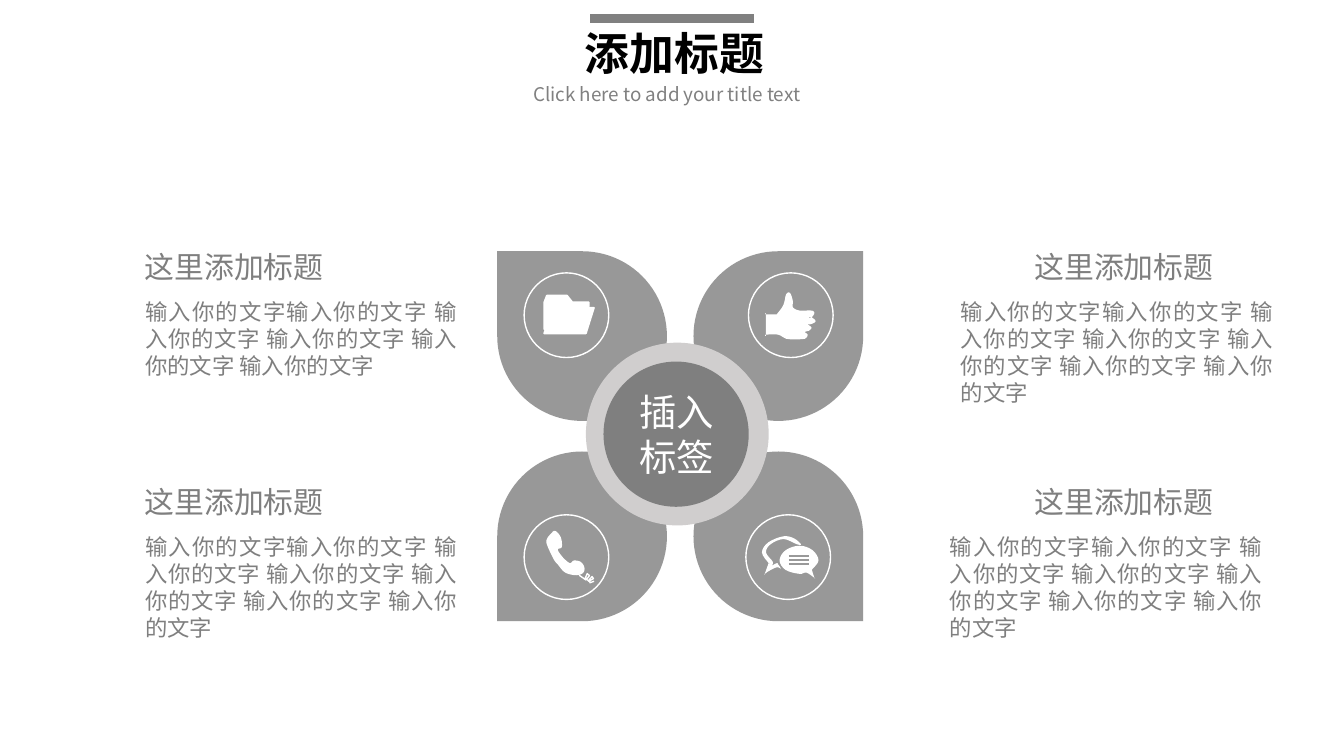
"""Build a four-petal diagram slide with icons, a centre label and captions."""
import lxml.etree
import pptx
import pptx.dml.color
import pptx.enum.shapes
import pptx.enum.text
import pptx.oxml.ns
import pptx.util

Pt = pptx.util.Pt
qn = pptx.oxml.ns.qn
SHAPE = pptx.enum.shapes.MSO_SHAPE
ALIGN = pptx.enum.text.PP_ALIGN
FONT = "Noto Sans CJK SC"
GREY, WHITE = "7F7F7F", "FFFFFF"
RING = 45.36
PHRASE = "输入你的文字"

FOLDER_FRONT = [(37.4, 18.7), (33.1, 32.4), (10.8, 32.4), (15.1, 18.7)]
FOLDER_BACK = [(14.4, 18.7), (15.1, 18), (34.6, 18), (34.6, 15.8), (25.9, 15.8),
               (23, 12.2), (12.2, 12.2), (10.8, 15.8), (10.8, 30.2)]
THUMB = [(33.8, 27.4), (36, 25.9), (33.8, 23.8), (31.7, 23.8), (33.8, 23.8),
         (35.3, 21.6), (33.8, 20.2), (27.4, 20.2), (23.8, 18.5), (23.8, 15.1),
         (22.3, 10.8), (20.2, 11.5), (18.7, 17.3), (15.1, 22.3), (15.1, 22.3),
         (9.4, 22.3), (9.4, 22.3), (9.4, 33.1), (9.4, 33.1), (15.8, 33.1),
         (20.2, 35.3), (24.5, 35.6), (30.2, 35.3), (31.7, 33.1), (30.2, 31.7),
         (32.4, 31), (33.8, 29.5), (32.4, 28.1), (31, 27.8)]
HANDSET = [(16.6, 8.6), (19.6, 12), (20.2, 17.3), (18, 18.7), (20.9, 23),
           (24.5, 25.9), (26.6, 24.5), (30.2, 25.2), (32.2, 28), (31.7, 31),
           (28.1, 32.4), (22, 31), (18, 26.6), (15.8, 23.8), (12.2, 16),
           (12.2, 13), (14.4, 10.1)]
CORD = [(29.5, 32.4), (33.1, 34.9), (35, 32.6), (33.8, 31.5), (32.8, 33.8),
        (34.6, 35.6), (37.1, 34.2), (36.4, 33.1), (34.9, 34.7), (35.3, 36.4),
        (37.4, 35.6)]
BACK_BUBBLE = [(16.6, 25.9), (13.7, 27.4), (13.7, 27.4), (14.4, 25.2), (10.8, 20.2),
               (13.2, 15.8), (20.2, 13), (27.4, 15.8), (29.5, 15.8), (25.9, 12.7),
               (20.2, 11.5), (12, 14.8), (8.6, 20.2), (12.2, 25.9), (12.2, 25.9),
               (10.1, 31.7), (10.1, 31.7), (12.2, 30.2), (16.6, 28.1),
               (18.7, 28.8), (17.3, 26.6)]
FRONT_BUBBLE = [(38.9, 24.5), (35.7, 19), (28.8, 16.6), (21.3, 19), (18, 24.5),
                (21.3, 29.6), (28.8, 31.7), (32.4, 31), (36.7, 33.8),
                (36.7, 33.8), (35.3, 29.5), (35.3, 29.5)]


def rgb(value):
    """Return a colour from a hex string."""
    return pptx.dml.color.RGBColor.from_string(value)


def paint(sp, fill=None, line=None, width=0.75):
    """Set the fill and line of a shape and drop its shadow."""
    sp.shadow.inherit = False
    if fill:
        sp.fill.solid()
        sp.fill.fore_color.rgb = rgb(fill)
    else:
        sp.fill.background()
    if line:
        sp.line.color.rgb = rgb(line)
        sp.line.width = Pt(width)
    else:
        sp.line.fill.background()


def write(sp, lines, size, color, align=ALIGN.LEFT, bold=False, wrap=True):
    """Write paragraphs in one font into a shape."""
    tf = sp.text_frame
    tf.text = "\n".join(lines)
    tf.word_wrap = wrap
    tf.auto_size = pptx.enum.text.MSO_AUTO_SIZE.NONE
    tf.vertical_anchor = pptx.enum.text.MSO_ANCHOR.TOP
    for p in tf.paragraphs:
        p.alignment = align
        p.line_spacing = Pt(size * 1.2)
        p.space_before = Pt(0)
        p.font.name, p.font.size, p.font.bold = FONT, Pt(size), bold
        p.font.color.rgb = rgb(color)
        props = p._p.find(".//" + qn("a:defRPr"))
        lxml.etree.SubElement(props, qn("a:ea")).set("typeface", FONT)


def add_text(s, box, lines, size, color, **style):
    """Add a text box."""
    write(s.shapes.add_textbox(*map(Pt, box)), lines, size, color, **style)


def add_ellipse(s, x, y, size, **look):
    """Add a circle."""
    sp = s.shapes.add_shape(SHAPE.OVAL, Pt(x), Pt(y), Pt(size), Pt(size))
    paint(sp, **look)


def add_petal(s, x, y, flips):
    """Add a translucent teardrop, flipped as asked."""
    sp = s.shapes.add_shape(SHAPE.TEAR, Pt(x), Pt(y), Pt(90.9), Pt(90.9))
    paint(sp, GREY)
    for flip in flips:
        sp._element.spPr.xfrm.set(flip, "1")
    color = sp._element.spPr.find(".//" + qn("a:srgbClr"))
    lxml.etree.SubElement(color, qn("a:alpha")).set("val", "80000")


def add_line(s, x1, y1, x2, y2, color, width):
    """Add a straight line without a shadow."""
    sp = s.shapes.add_connector(pptx.enum.shapes.MSO_CONNECTOR.STRAIGHT,
                                Pt(x1), Pt(y1), Pt(x2), Pt(y2))
    sp.line.color.rgb = rgb(color)
    sp.line.width = Pt(width)
    lxml.etree.SubElement(sp._element.spPr, qn("a:effectLst"))


def smooth(points, steps=4):
    """Return a closed Catmull-Rom curve; a doubled point makes a corner."""
    curve = []
    for i, b in enumerate(points):
        a, c, d = (points[(i + k) % len(points)] for k in (-1, 1, 2))
        for t in (n / steps for n in range(steps)):
            curve.append(tuple(
                (2 * q + (r - p) * t + (2 * p - 5 * q + 4 * r - v) * t ** 2
                 + (3 * q - p - 3 * r + v) * t ** 3) / 2
                for p, q, r, v in zip(a, b, c, d)))
    return curve


def add_outline(s, x, y, points, close=True, **look):
    """Add a freeform whose points are relative to a ring corner."""
    start, *rest = [(Pt(x + px), Pt(y + py)) for px, py in points]
    builder = s.shapes.build_freeform(*start)
    builder.add_line_segments(rest, close=close)
    paint(builder.convert_to_shape(), **look)


def add_folder(s, x, y):
    """Draw the folder icon."""
    for part in (FOLDER_FRONT, FOLDER_BACK):
        add_outline(s, x, y, part, fill=WHITE, line=WHITE, width=1)


def add_thumb(s, x, y):
    """Draw the thumbs-up icon."""
    add_outline(s, x, y, smooth(THUMB), fill=WHITE)


def add_phone(s, x, y):
    """Draw the telephone icon."""
    add_outline(s, x, y, smooth(HANDSET), fill=WHITE)
    add_outline(s, x, y, CORD, close=False, line=WHITE)


def add_bubbles(s, x, y):
    """Draw the speech bubbles icon."""
    for part in (BACK_BUBBLE, FRONT_BUBBLE):
        add_outline(s, x, y, smooth(part), fill=WHITE)
    for row in range(3):
        level = y + 22 + 2.15 * row
        add_line(s, x + 23, level, x + 33.8, level, "999999", 0.75)


def main():
    """Build and save the slide."""
    prs = pptx.Presentation()
    prs.slide_width, prs.slide_height = Pt(720), Pt(405)
    s = prs.slides.add_slide(prs.slide_layouts[5])
    title = s.shapes.title
    title.left, title.top, title.width, title.height = map(Pt, (306, 10.1, 111, 36))
    write(title, ["添加标题"], 24, "000000", bold=True)
    add_line(s, 316.1, 10.1, 403.9, 10.1, "808080", 5)
    add_text(s, (278.6, 41, 166.3, 19.4), ["Click here to add your title text"],
             10.1, "808080", wrap=False)

    for x, flip_h in ((371.5, []), (266.4, ["flipH"])):
        for y, flip_v in ((134.6, []), (241.9, ["flipV"])):
            add_petal(s, x, y, flip_h + flip_v)
    add_ellipse(s, 313.9, 183.6, 97.9, fill="D0CECE")
    add_ellipse(s, 323.3, 193.7, 77.8, fill=GREY)
    add_text(s, (335.5, 205.2, 54.7, 55.4), ["插入", "标签"], 20, WHITE, wrap=False)

    for draw, x, y in ((add_folder, 280.8, 146.2), (add_thumb, 401, 146.2),
                       (add_phone, 280.8, 275.8), (add_bubbles, 399.6, 275.8)):
        draw(s, x, y)
        add_ellipse(s, x, y, RING, line=WHITE)

    for head_x, head_w, body_x, y, count in (
            (70.6, 175.7, 70.6, 129.6, 4), (70.6, 175.7, 70.6, 255.6, 5),
            (547.2, 118.8, 507.6, 129.6, 5), (547.2, 118.8, 501.8, 255.6, 5)):
        add_text(s, (head_x, y, head_w, 26.6), ["这里添加标题"], 16, GREY)
        add_text(s, (body_x, y + 26.6, 181.4, 65.5),
                 [PHRASE + " ".join([PHRASE] * (count + 1))],
                 12, GREY, align=ALIGN.JUSTIFY)
    prs.save("out.pptx")


if __name__ == "__main__":
    main()
